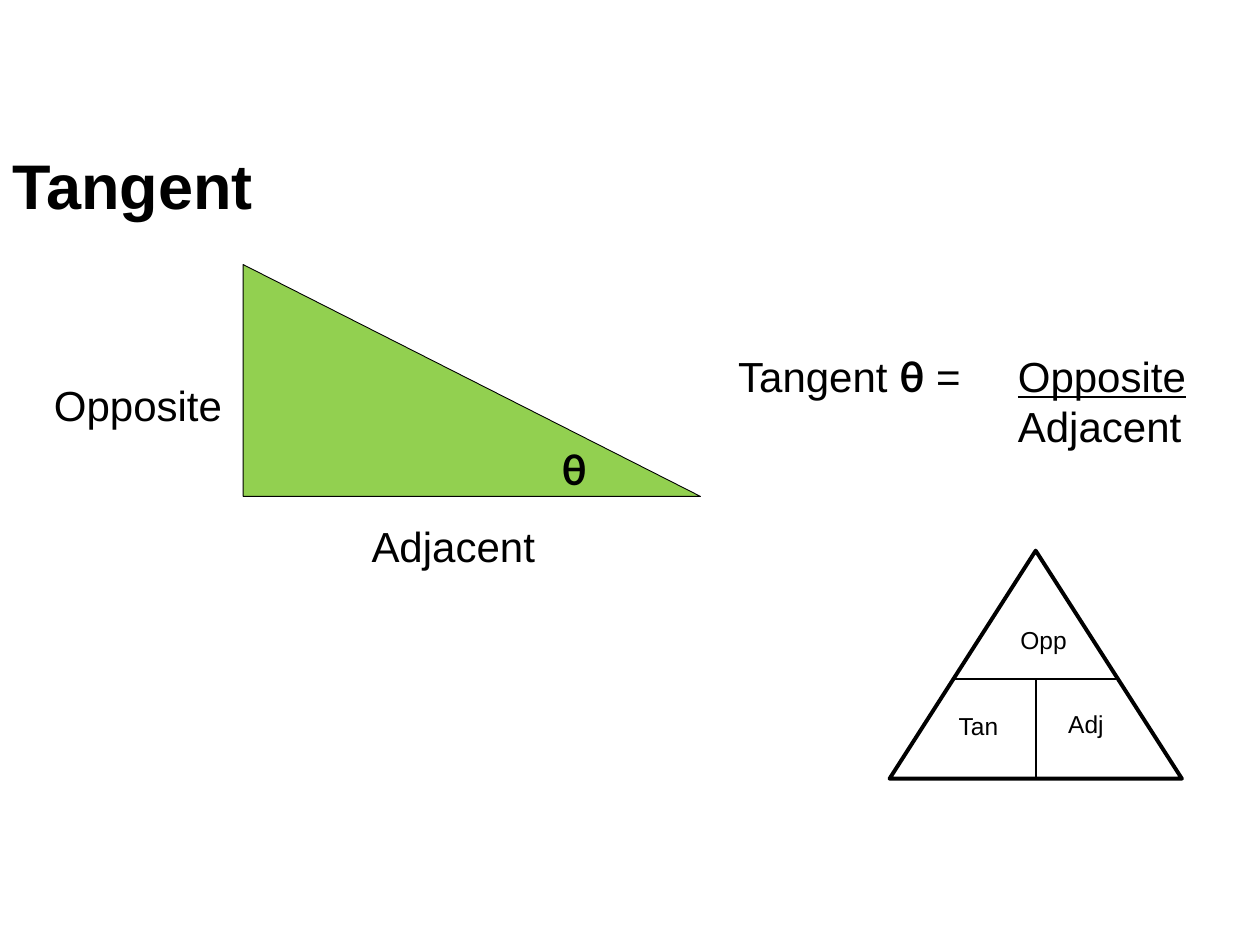
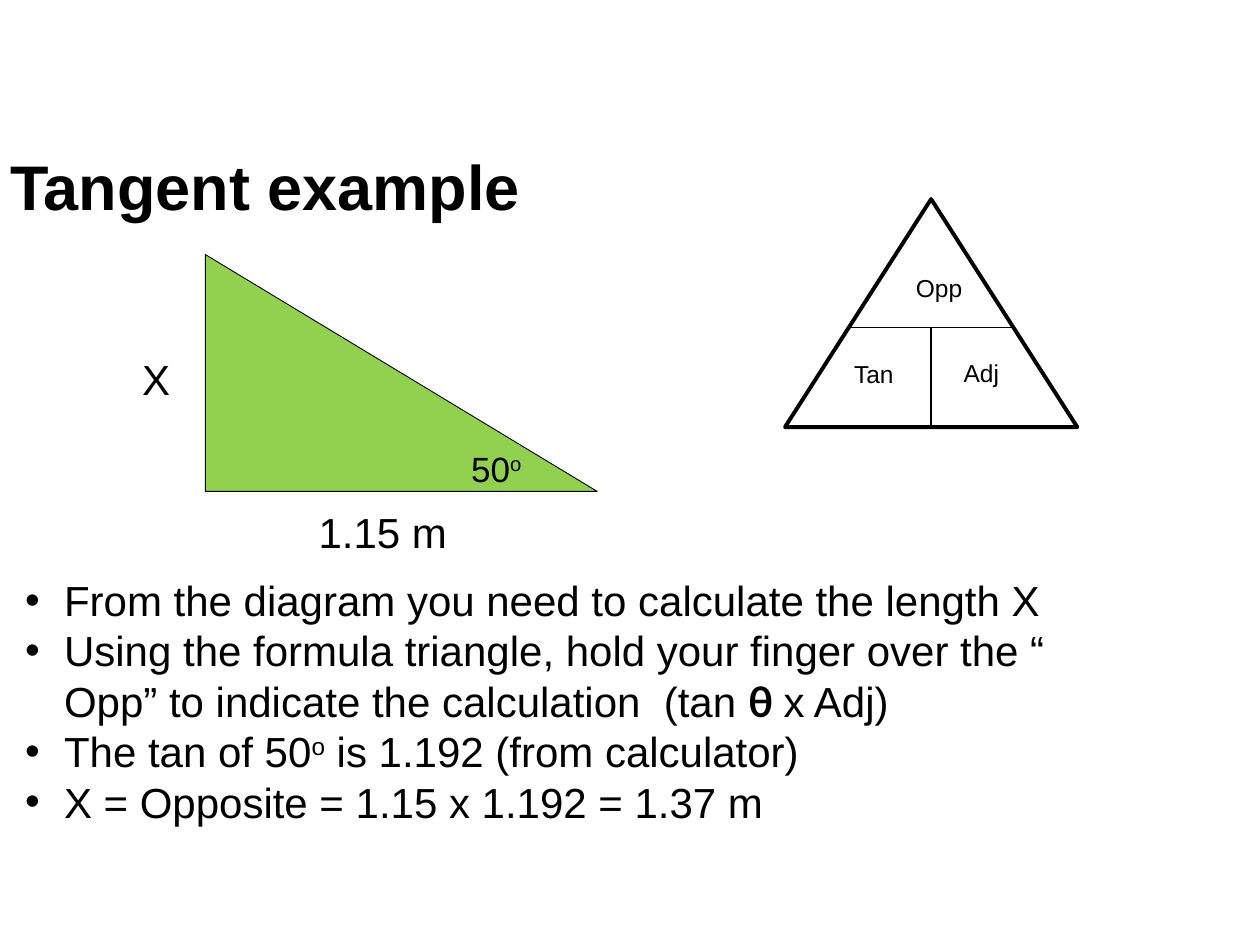
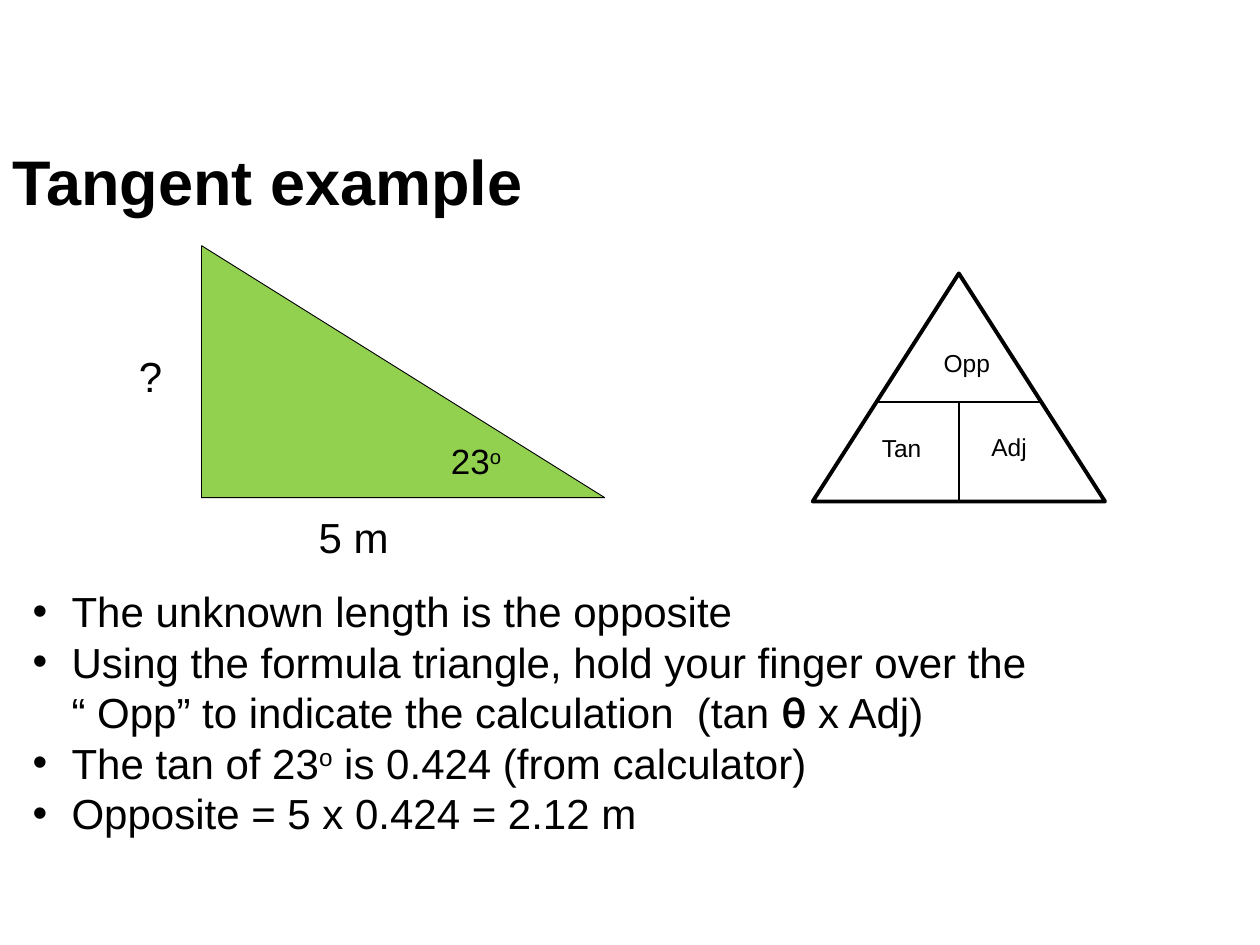
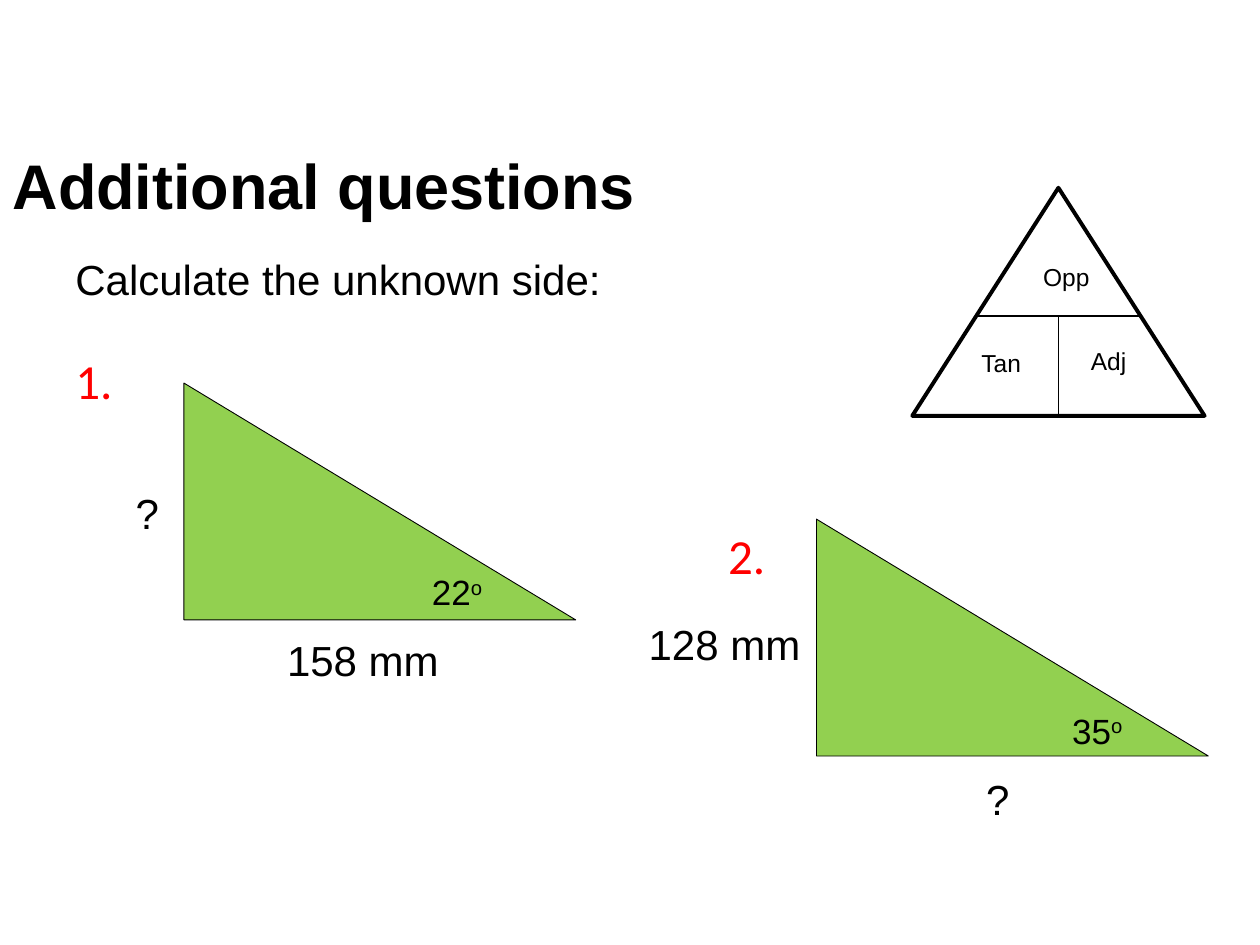
from dataclasses import dataclass

from lxml.etree import SubElement
from pptx import Presentation
from pptx.dml.color import RGBColor as RGB
from pptx.enum.shapes import MSO_CONNECTOR as CONN, MSO_SHAPE as SHAPE
from pptx.enum.text import MSO_ANCHOR as ANCHOR, MSO_AUTO_SIZE as FIT, PP_ALIGN as ALIGN
from pptx.oxml.ns import qn
from pptx.util import Emu, Pt

PX = 9144  # 100 px to the inch


def px(n):
    return Emu(n * PX)


@dataclass(frozen=True)
class Theme:
    ink: RGB = RGB(0x00, 0x00, 0x00)
    green: RGB = RGB(0x92, 0xD0, 0x50)
    red: RGB = RGB(0xFF, 0x00, 0x00)
    font: str = "Arial"
    symbol_font: str = "Lato"
    number_font: str = "Calibri"
    title: int = 36
    number: int = 28
    body: int = 24
    angle: int = 20
    small: int = 14
    thin: float = 0.5
    line: float = 1
    thick: float = 2.25
    indent: int = 31


# Runs with their own style: (text, style)
THETA = ("θ", "symbol")
DEGREE = ("o", "super")


class Deck:
    def __init__(self, theme):
        self.t = theme
        self.prs = Presentation()
        self.prs.slide_width, self.prs.slide_height = px(1000), px(750)

    def slide(self, title, x, y, h):
        """Start a slide with its title."""
        self.s = self.prs.slides.add_slide(self.prs.slide_layouts[5])
        self.shapes = self.s.shapes
        sp = self.s.shapes.title
        sp.left, sp.top, sp.width, sp.height = px(x), px(y), px(900), px(h)
        tf = sp.text_frame
        tf.text = title
        tf.auto_size, tf.vertical_anchor = FIT.NONE, ANCHOR.MIDDLE
        p = tf.paragraphs[0]
        p.alignment, p.line_spacing = ALIGN.LEFT, 0.9
        self.style(p.runs[0], self.t.title, bold=True)

    def group(self):
        """Send the next elements to a new group."""
        self.shapes = self.s.shapes.add_group_shape().shapes

    def ungroup(self):
        self.shapes = self.s.shapes

    def style(self, r, size, font=None, color=None, bold=False):
        f = r.font
        f.size, f.name, f.bold = Pt(size), font or self.t.font, bold
        f.color.rgb = color or self.t.ink

    def runs(self, p, parts, size, font=None, color=None):
        for part in [parts] if isinstance(parts, str) else parts:
            text, kind = (part, None) if isinstance(part, str) else part
            r = p.add_run()
            r.text = text
            symbol = kind == "symbol"
            self.style(r, size, self.t.symbol_font if symbol else font, color, symbol)
            if kind == "super":
                r.font._element.set("baseline", "30000")
            r.font.underline = True if kind == "under" else None

    def text(self, lines, x, y, w, h=50, size=None, align=ALIGN.LEFT, **look):
        """Text box with one paragraph for each entry of lines."""
        tf = self.shapes.add_textbox(px(x), px(y), px(w), px(h)).text_frame
        tf.word_wrap, tf.auto_size = True, FIT.SHAPE_TO_FIT_TEXT
        for i, parts in enumerate(lines):
            p = tf.add_paragraph() if i else tf.paragraphs[0]
            p.alignment = align
            self.runs(p, parts, size or self.t.body, **look)
        return tf

    def bullets(self, lines, x, y, w):
        for p in self.text(lines, x, y, w, 212).paragraphs:
            pPr = p._p.get_or_add_pPr()
            pPr.set("marL", str(px(self.t.indent)))
            pPr.set("indent", str(-px(self.t.indent)))
            SubElement(pPr, qn("a:buFont"), typeface=self.t.font)
            SubElement(pPr, qn("a:buChar"), char="•")

    def tabbed(self, lines, x, y, w, h, tab):
        """Text whose second column starts at a tab stop."""
        for p in self.text(lines, x, y, w, h).paragraphs:
            tabs = SubElement(p._p.get_or_add_pPr(), qn("a:tabLst"))
            SubElement(tabs, qn("a:tab"), pos=str(px(tab)), algn="l")

    def shape(self, kind, x, y, w, h, weight, fill=None):
        sp = self.shapes.add_shape(kind, px(x), px(y), px(w), px(h))
        sp.shadow.inherit = False
        if fill:
            sp.fill.solid()
            sp.fill.fore_color.rgb = fill
        else:
            sp.fill.background()
        sp.line.color.rgb, sp.line.width = self.t.ink, Pt(weight)

    def line(self, x1, y1, x2, y2):
        c = self.shapes.add_connector(CONN.STRAIGHT, px(x1), px(y1), px(x2), px(y2))
        c.line.color.rgb, c.line.width = self.t.ink, Pt(self.t.line)
        SubElement(c._element.spPr, qn("a:effectLst"))

    def right_triangle(self, x, y, w, h, labels, angle):
        """Green triangle; labels are (text, x, y, w), angle is (parts, x, y, w, size)."""
        self.group()
        self.shape(SHAPE.RIGHT_TRIANGLE, x, y, w, h, self.t.thin, self.t.green)
        for label, lx, ly, lw in labels:
            align = ALIGN.CENTER if len(label) == 1 else ALIGN.LEFT
            self.text([label], lx, ly, lw, align=align)
        parts, ax, ay, aw, size = angle
        self.text([parts], ax, ay, aw, 44, size)
        self.ungroup()

    def formula_triangle(self, x, y):
        """Opp over Tan and Adj."""
        self.group()
        w, h, bar = 232, 181, 102
        mid = x + w // 2
        self.shape(SHAPE.ISOSCELES_TRIANGLE, x, y, w, h, self.t.thick)
        self.line(mid - 65, y + bar, mid + 65, y + bar)
        self.line(mid, y + bar, mid, y + h)
        for label, dx, dy, lw in (("Tan", 45, 122, 71), ("Adj", 132, 121, 56), ("Opp", 94, 54, 69)):
            self.text([label], x + dx, y + dy, lw, 34, self.t.small)
        self.ungroup()

    def question_number(self, label, x, y):
        self.text([label], x, y, 58, 57, self.t.number,
                  font=self.t.number_font, color=self.t.red)


def example_steps(first, angle, tangent, result, quote_theta):
    """The four steps of a worked example."""
    return [
        first,
        ["Using the formula triangle, hold your finger over the “ Opp” to indicate "
         "the calculation  (tan ", *quote_theta],
        [f"The tan of {angle}", DEGREE, f" is {tangent} (from calculator)"],
        result,
    ]


def main():
    t = Theme()
    d = Deck(t)

    # Definition
    d.slide("Tangent", 0, 109, 82)
    d.right_triangle(193, 210, 363, 184,
                     [("Opposite", 33, 296, 160), ("Adjacent", 285, 408, 302)],
                     ([THETA], 436, 347, 69, t.body))
    d.tabbed([["Tangent ", THETA, " =\t", ("Opposite", "under")], "\tAdjacent"],
             576, 273, 391, 131, tab=222)
    d.formula_triangle(706, 437)

    # Worked example with 50 degrees
    d.slide("Tangent example", -2, 107, 88)
    d.right_triangle(163, 202, 311, 188,
                     [("X", 94, 276, 60), ("1.15 m", 243, 397, 177)],
                     (["50", DEGREE], 364, 350, 79, t.angle))
    d.bullets(example_steps("From the diagram you need to calculate the length X",
                            "50", "1.192", "X = Opposite = 1.15 x 1.192 = 1.37 m",
                            [("θ ", "symbol"), "x Adj)"]), 10, 451, 865)
    d.formula_triangle(623, 158)

    # Worked example with 23 degrees
    d.slide("Tangent example", 0, 107, 80)
    d.right_triangle(160, 195, 320, 200,
                     [("?", 89, 273, 61), ("5 m", 243, 401, 182)],
                     (["23", DEGREE], 348, 344, 79, t.angle))
    d.bullets(example_steps("The unknown length is the opposite",
                            "23", "0.424", "Opposite = 5 x 0.424 = 2.12 m",
                            [THETA, " x Adj)"]), 16, 460, 809)
    d.formula_triangle(645, 217)

    # Questions
    d.slide("Additional questions", 0, 105, 91)
    d.text(["Calculate the unknown side:"], 50, 196, 506)
    d.right_triangle(146, 304, 311, 188,
                     [("?", 87, 382, 60), ("158 mm", 218, 499, 156)],
                     (["22", DEGREE], 333, 448, 74, t.angle))
    d.right_triangle(648, 412, 311, 188,
                     [("?", 762, 609, 60), ("128 mm", 505, 486, 143)],
                     (["35", DEGREE], 841, 558, 81, t.angle))
    d.formula_triangle(724, 149)
    d.question_number("1.", 50, 273)
    d.question_number("2.", 568, 412)

    d.prs.save("out.pptx")


if __name__ == "__main__":
    main()
